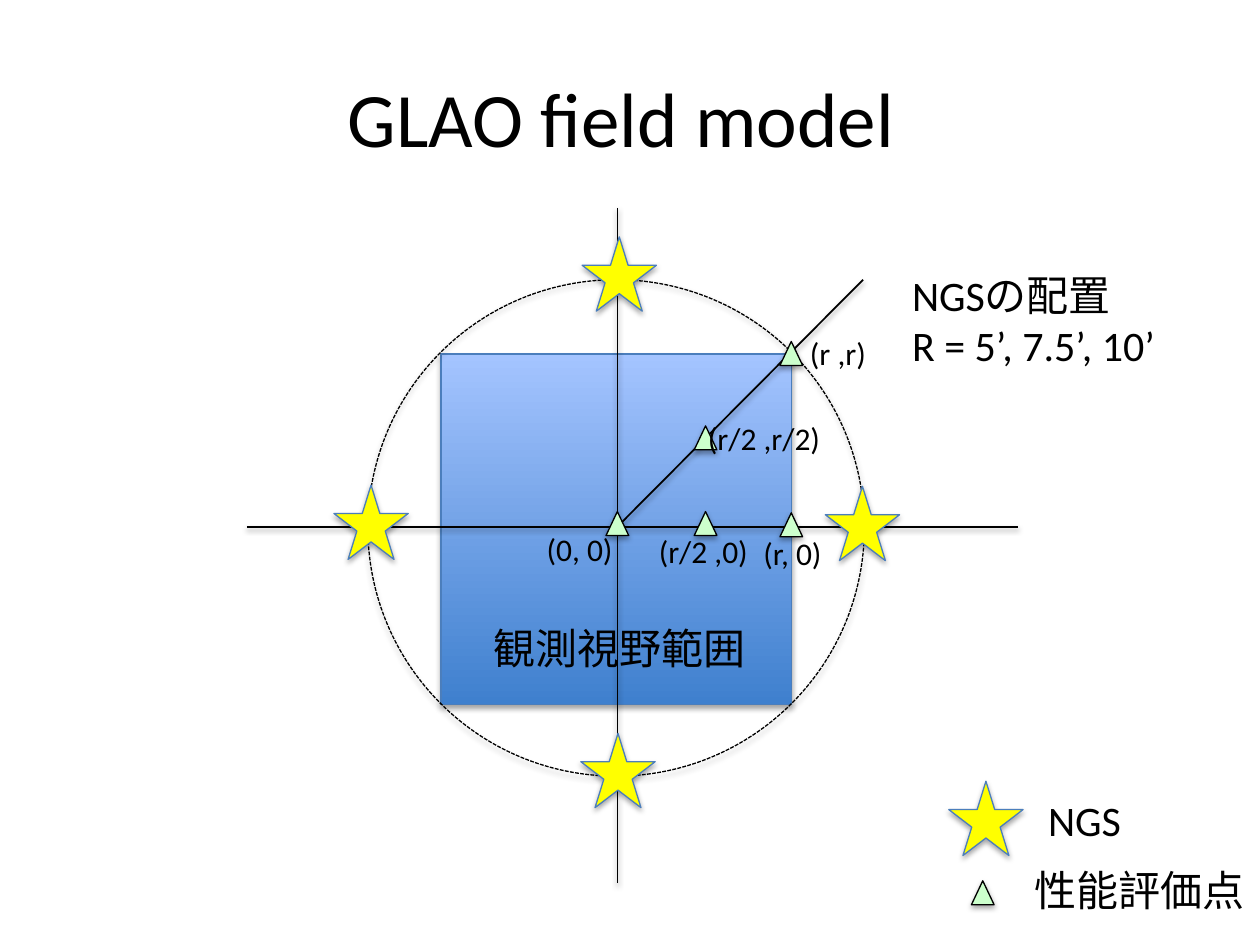
import dataclasses

import lxml.etree
import pptx
import pptx.dml.color
import pptx.enum.dml
import pptx.enum.shapes
import pptx.enum.text
import pptx.oxml.ns
import pptx.util

SHAPES = pptx.enum.shapes.MSO_SHAPE


@dataclasses.dataclass(frozen=True)
class Theme:
    font: str = "Calibri"
    title_size: int = 44
    text_size: int = 24
    label_size: int = 18
    ink: str = "000000"
    outline: str = "4B7EBC"
    star: str = "FFFF00"
    point: str = "CCFFCC"
    field_bottom: str = "3F80CE"
    field_top: str = "A4C4FF"


def color(value):
    return pptx.dml.color.RGBColor.from_string(value)


class FieldSlide:
    columns = 100
    rows = 75

    def __init__(self, presentation, theme):
        self.theme = theme
        self.column = presentation.slide_width / self.columns
        self.row = presentation.slide_height / self.rows
        self.slide = presentation.slides.add_slide(presentation.slide_layouts[5])

    def place(self, left, top, width, height):
        return (round(left * self.column), round(top * self.row),
                round(width * self.column), round(height * self.row))

    def format_text(self, text_frame, size):
        for paragraph in text_frame.paragraphs:
            for run in paragraph.runs:
                run.font.name = self.theme.font
                run.font.size = pptx.util.Pt(size)
                run.font.color.rgb = color(self.theme.ink)

    def title(self, text, *box):
        shape = self.slide.shapes.title
        shape.left, shape.top, shape.width, shape.height = self.place(*box)
        shape.text_frame.text = text
        shape.text_frame.vertical_anchor = pptx.enum.text.MSO_ANCHOR.MIDDLE
        shape.text_frame.paragraphs[0].alignment = pptx.enum.text.PP_ALIGN.CENTER
        self.format_text(shape.text_frame, self.theme.title_size)

    def shadow(self, shape, distance, opacity):
        qualified = pptx.oxml.ns.qn
        effects = lxml.etree.SubElement(shape.element.spPr, qualified("a:effectLst"))
        outer = lxml.etree.SubElement(
            effects, qualified("a:outerShdw"), blurRad=str(pptx.util.Pt(3.1)),
            dist=str(pptx.util.Pt(distance)), dir="5400000", rotWithShape="0")
        tint = lxml.etree.SubElement(outer, qualified("a:srgbClr"), val=self.theme.ink)
        lxml.etree.SubElement(tint, qualified("a:alpha"), val=str(opacity * 1000))

    def shape(self, kind, center, size, line, fill=None, gradient=None, dash=None):
        width, height = size
        shape = self.slide.shapes.add_shape(
            kind, *self.place(center[0] - width / 2, center[1] - height / 2, width, height))
        if gradient:
            shape.fill.gradient()
            shape.fill.gradient_angle = 90
            for stop, value in zip(shape.fill.gradient_stops, gradient):
                stop.color.rgb = color(value)
        elif fill:
            shape.fill.solid()
            shape.fill.fore_color.rgb = color(fill)
        else:
            shape.fill.background()
        shape.line.color.rgb = color(line)
        shape.line.width = pptx.util.Pt(0.75)
        if dash:
            shape.line.dash_style = dash
        self.shadow(shape, 1.8, 35)

    def star(self, *center):
        self.shape(SHAPES.STAR_5_POINT, center, (5.9, 5.9), self.theme.outline, self.theme.star)

    def point(self, *center):
        self.shape(SHAPES.ISOSCELES_TRIANGLE, center, (1.8, 1.9), self.theme.ink, self.theme.point)

    def line(self, *ends):
        connector = self.slide.shapes.add_connector(
            pptx.enum.shapes.MSO_CONNECTOR.STRAIGHT, *self.place(*ends))
        connector.line.color.rgb = color(self.theme.ink)
        connector.line.width = pptx.util.Pt(1)
        self.shadow(connector, 1.6, 38)

    def text(self, text, size, *box):
        text_frame = self.slide.shapes.add_textbox(*self.place(*box)).text_frame
        text_frame.word_wrap = False
        text_frame.auto_size = pptx.enum.text.MSO_AUTO_SIZE.SHAPE_TO_FIT_TEXT
        text_frame.text = text
        self.format_text(text_frame, size)


def main():
    presentation = pptx.Presentation()
    presentation.slide_width = pptx.util.Inches(10)
    presentation.slide_height = pptx.util.Inches(7.5)
    theme = Theme()
    field = FieldSlide(presentation, theme)

    field.title("GLAO field model ", 5, 3, 90, 12.5)
    field.shape(SHAPES.RECTANGLE, (48.9, 42), (27.8, 27.8), theme.outline,
                gradient=(theme.field_bottom, theme.field_top))
    field.shape(SHAPES.OVAL, (48.9, 41.9), (39.4, 39.4), theme.ink,
                dash=pptx.enum.dml.MSO_LINE.SQUARE_DOT)

    field.line(19.6, 41.8, 80.8, 41.8)
    field.line(49, 16.5, 49, 70.1)
    for center in ((49.15, 21.75), (29.45, 41.45), (68.45, 41.55), (49.05, 61.15)):
        field.star(*center)
    field.line(68.5, 22.2, 49, 41.8)
    for center in ((49, 41.55), (56, 41.55), (56, 34.75), (62.8, 28.05), (62.8, 41.65)):
        field.point(*center)

    field.star(78.25, 64.95)
    field.text("NGS", theme.text_size, 82.2, 62.6, 7.9, 5)
    field.point(78, 70.85)
    field.text("性能評価点", theme.text_size, 81.1, 68.1, 18.8, 5)

    for label, left, top, width in (
        ("(0, 0)", 42.4, 41.6, 7.3),
        ("(r/2 ,0)", 51.3, 41.7, 9.2),
        ("(r, 0)", 59.6, 41.9, 6.7),
        ("(r/2 ,r/2)", 55.2, 32.8, 11),
        ("(r ,r)", 63.3, 26, 6.5),
    ):
        field.text(label, theme.label_size, left, top, width, 4)
    field.text("観測視野範囲", theme.text_size, 38.2, 48.9, 22.2, 5)
    field.text("NGSの配置\nR = 5’, 7.5’, 10’", theme.text_size, 71.4, 20.9, 21.5, 9.1)

    presentation.save("out.pptx")


if __name__ == "__main__":
    main()
